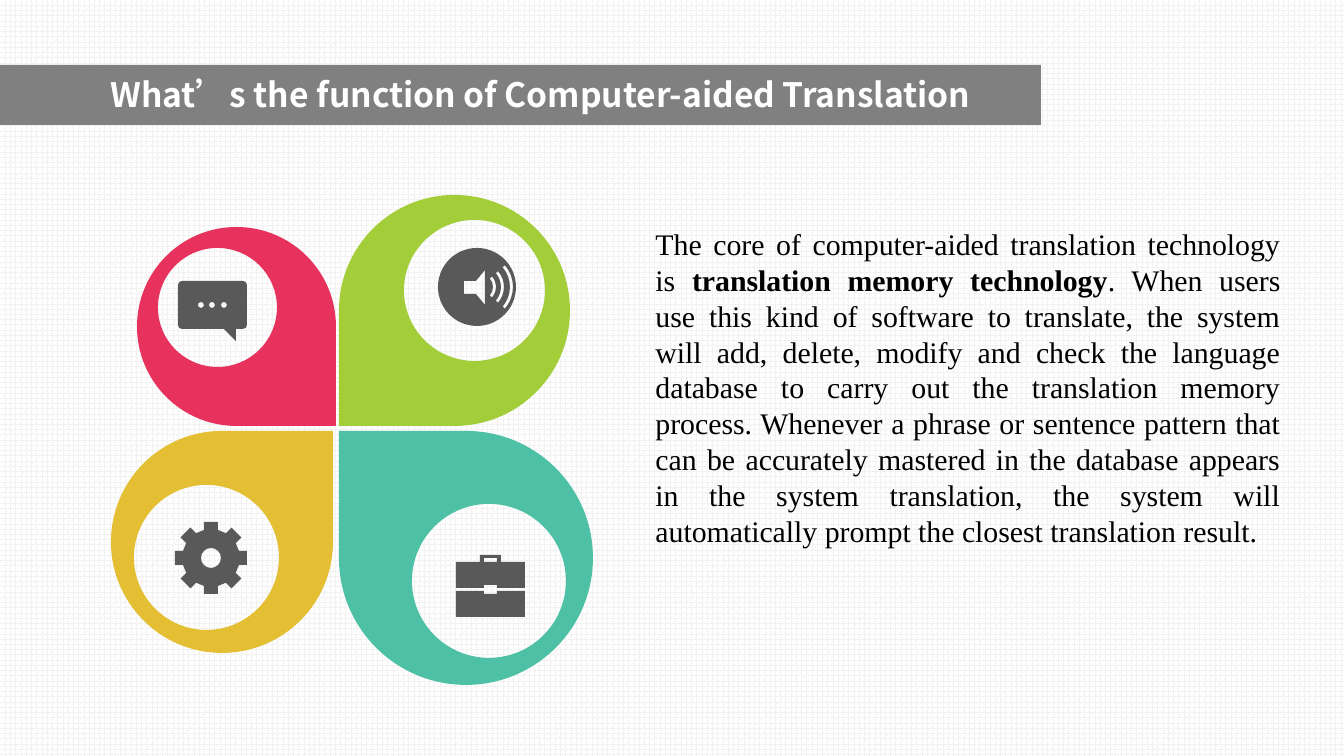
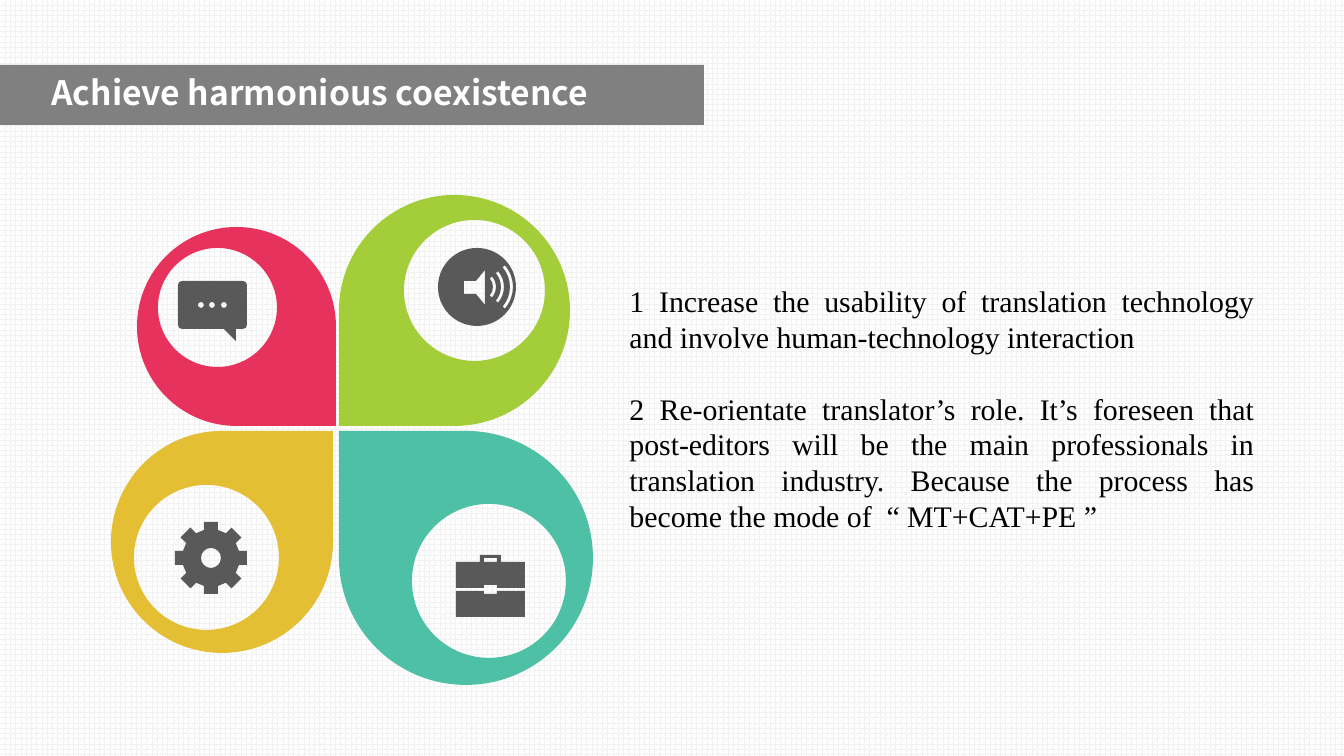
from math import ceil, cos, radians, sin, tan

from lxml import etree
from pptx import Presentation
from pptx import util as u
from pptx.dml.color import RGBColor
from pptx.enum import dml, shapes, text
from pptx.oxml.ns import qn

PX = 914400 / 134.4
PAGE_SIZE = (1344, 756)
BAND_TOP, BAND_HEIGHT = 65, 60
LINE_FACTOR = 1.2
COLORS = {
    "paper": "FFFFFF", "grid": "F2F2F2", "band": "808080", "title": "FFFFFF",
    "body": "000000", "icon": "595959",
    "red": "E6325C", "yellow": "E4BE33", "green": "A3CD39", "teal": "4EC0A5",
}
TITLE_STYLE = {"name": "Noto Sans CJK SC", "size": 18, "bold": True, "color": "title"}
BODY_STYLE = {"name": "Times New Roman", "size": 16, "color": "body"}

# Each paragraph is a list of (text, bold) spans; boxes are left, top, width, height.
SLIDES = [
    {
        "title": "What’s the function of Computer-aided Translation",
        "band_width": 1041,
        "title_box": (97, 67, 944, 54),
        "body_box": (642, 219, 652, 339),
        "body": [[
            ("The core of computer-aided translation technology is ", False),
            ("translation memory technology", True),
            (". When users use this kind of software to translate, the system will add, "
             "delete, modify and check the language database to carry out the translation "
             "memory process. Whenever a phrase or sentence pattern that can be accurately "
             "mastered in the database appears in the system translation, the system will "
             "automatically prompt the closest translation result.", False),
        ]],
    },
    {
        "title": "Achieve harmonious coexistence",
        "band_width": 704,
        "title_box": (38, 65, 1020, 54),
        "body_box": (616, 276, 652, 267),
        "body": [
            [("1 Increase the usability of translation technology and involve "
              "human-technology interaction", False)],
            [("2 Re-orientate translator’s role. It’s foreseen that post-editors will be "
              "the main professionals in translation industry. Because the process has "
              "become the mode of  “ MT+CAT+PE ”", False)],
        ],
    },
]

# Colour, petal (left, top, size), angle of the pointed corner, hole (left, top, size).
PETALS = [
    ("red", (137, 227, 199), 45, (158, 248, 119)),
    ("yellow", (111, 431, 222), 315, (134, 485, 145)),
    ("green", (339, 195, 231), 135, (404, 220, 141)),
    ("teal", (339, 431, 254), 225, (412, 504, 154)),
]
BUBBLE = {"box": (178, 281, 247, 329), "radius": 4, "tail": [(236, 329), (236, 341), (224, 329)],
          "dots": (201, 212, 224), "dot_y": 305, "dot_radius": 3}
SPEAKER = {"center": (477, 287), "radius": 39, "wave_center": (480, 287),
           "wave_radii": (16, 24, 33), "wave_width": 3, "wave_angle": 41,
           "horn": [(485, 305), (476, 294), (464, 294), (464, 281), (476, 281), (485, 270)]}
GEAR = {"center": (211, 558), "teeth": 8, "hole": 10,
        "tooth": [(28, -7), (36, -7), (36, 7), (28, 7)]}
CASE_BOTTOM = [[(456, 591), (484, 591), (484, 594), (497, 594), (497, 591),
                (525, 591), (525, 617), (456, 617)]]
CASE_TOP = [
    [(456, 562), (480, 562), (480, 555), (501, 555), (501, 562), (525, 562),
     (525, 588), (497, 588), (497, 585), (484, 585), (484, 588), (456, 588)],
    [(484, 558), (497, 558), (497, 562), (484, 562)],
]


def emu(length):
    return u.Emu(round(length * PX))


def rgb(name):
    return RGBColor.from_string(COLORS[name])


def is_curve(item):
    return len(item) == 3


def polar(center, radius, angle):
    return (center[0] + radius * cos(angle), center[1] + radius * sin(angle))


def arc(center, radius, start=0, end=360):
    """Start point, then curves of (control, control, end); degrees run clockwise."""
    count = ceil(abs(end - start) / 90)
    step = radians(end - start) / count
    pull = 4 / 3 * tan(step / 4) * radius
    items = [polar(center, radius, radians(start))]
    for i in range(count):
        a = radians(start) + i * step
        b = a + step
        (ax, ay), (bx, by) = polar(center, radius, a), polar(center, radius, b)
        items.append(((ax - pull * sin(a), ay + pull * cos(a)),
                      (bx + pull * sin(b), by - pull * cos(b)), (bx, by)))
    return items


def petal_contours(body, corner, hole):
    left, top, size = body
    center = (left + size / 2, top + size / 2)
    tip = polar(center, size / 2 * 2 ** 0.5, radians(corner))
    x, y, width = hole
    return [arc(center, size / 2, corner + 45, corner + 315) + [tip],
            arc((x + width / 2, y + width / 2), width / 2)]


def bubble_contours():
    left, top, right, bottom = BUBBLE["box"]
    r = BUBBLE["radius"]
    corners = [(right - r, bottom - r), (left + r, bottom - r),
               (left + r, top + r), (right - r, top + r)]
    rounded = [arc(c, r, 90 * i, 90 * i + 90) for i, c in enumerate(corners)]
    outline = rounded[0] + BUBBLE["tail"] + sum(rounded[1:], [])
    dots = [arc((x, BUBBLE["dot_y"]), BUBBLE["dot_radius"]) for x in BUBBLE["dots"]]
    return [outline] + dots


def speaker_contours():
    center, angle = SPEAKER["wave_center"], SPEAKER["wave_angle"]
    waves = [arc(center, r, -angle, angle) + arc(center, r - SPEAKER["wave_width"], angle, -angle)
             for r in SPEAKER["wave_radii"]]
    return [arc(SPEAKER["center"], SPEAKER["radius"]), SPEAKER["horn"]] + waves


def gear_contours():
    cx, cy = GEAR["center"]
    outline = []
    for i in range(GEAR["teeth"]):
        turn = radians(360 * i / GEAR["teeth"])
        outline += [(cx + x * cos(turn) - y * sin(turn), cy + x * sin(turn) + y * cos(turn))
                    for x, y in GEAR["tooth"]]
    return [outline, arc((cx, cy), GEAR["hole"])]


def paint(shape, color):
    shape.shadow.inherit = False
    shape.fill.solid()
    shape.fill.fore_color.rgb = rgb(color)
    shape.line.fill.background()


def bend(shape, contours):
    """Merge the three line steps of each curve into one cubic curve."""
    track = shape._element.find(".//" + qn("a:path"))
    steps = iter(list(track))
    for contour in contours:
        next(steps)
        for item in contour[1:]:
            parts = [next(steps) for _ in range(3 if is_curve(item) else 1)]
            if is_curve(item):
                curve = track.makeelement(qn("a:cubicBezTo"))
                parts[0].addprevious(curve)
                for part in parts:
                    curve.append(part[0])
                    track.remove(part)
        next(steps)


def add_outline(page, contours, color):
    """Draw closed contours as one shape; inner contours become holes."""
    builder = None
    for contour in contours:
        points = [p for item in contour for p in (item if is_curve(item) else [item])]
        points = [(emu(x), emu(y)) for x, y in points]
        if builder is None:
            builder = page.shapes.build_freeform(*points[0], scale=1.0)
        else:
            builder.move_to(*points[0])
        builder.add_line_segments(points[1:], close=True)
    shape = builder.convert_to_shape()
    bend(shape, contours)
    paint(shape, color)
    return shape


def place(box, bounds):
    for name, value in zip(("left", "top", "width", "height"), bounds):
        setattr(box, name, emu(value))


def write(box, bounds, paragraphs, style, align):
    place(box, bounds)
    frame = box.text_frame
    for name, value in {"word_wrap": True, "vertical_anchor": text.MSO_ANCHOR.TOP,
                        "auto_size": text.MSO_AUTO_SIZE.SHAPE_TO_FIT_TEXT}.items():
        setattr(frame, name, value)
    line = u.Pt(style["size"] * LINE_FACTOR)
    for i, spans in enumerate(paragraphs):
        para = frame.add_paragraph() if i else frame.paragraphs[0]
        props = para._p.get_or_add_pPr()
        props.set("marL", "0")
        props.set("indent", "0")
        etree.SubElement(props, qn("a:buNone"))
        for name, value in {"alignment": align, "line_spacing": line,
                            "space_before": line if i else u.Pt(0)}.items():
            setattr(para, name, value)
        for words, bold in spans:
            span = para.add_run()
            span.text = words
            for name, value in {"name": style["name"], "size": u.Pt(style["size"]),
                                "bold": bold}.items():
                setattr(span.font, name, value)
            span.font.color.rgb = rgb(style["color"])


def set_background(page):
    fill = page.background.fill
    fill.patterned()
    fill.pattern = dml.MSO_PATTERN.SPHERE
    fill.fore_color.rgb = rgb("grid")
    fill.back_color.rgb = rgb("paper")


def add_band(page, width):
    band = page.shapes.add_shape(shapes.MSO_SHAPE.RECTANGLE, 0, emu(BAND_TOP),
                                 emu(width), emu(BAND_HEIGHT))
    paint(band, "band")
    page.shapes._spTree.insert(2, band._element)  # behind the title


def add_flower(page):
    for color, body, corner, hole in PETALS:
        add_outline(page, petal_contours(body, corner, hole), color)
    for contours in (bubble_contours(), speaker_contours(), gear_contours()):
        add_outline(page, contours, "icon")
    page.shapes.add_group_shape(
        [add_outline(page, part, "icon") for part in (CASE_BOTTOM, CASE_TOP)])


def main():
    deck = Presentation()
    deck.slide_width, deck.slide_height = map(emu, PAGE_SIZE)
    for content in SLIDES:
        page = deck.slides.add_slide(deck.slide_layouts[1])
        set_background(page)
        add_band(page, content["band_width"])
        title = [[(content["title"], TITLE_STYLE["bold"])]]
        write(page.shapes.title, content["title_box"], title, TITLE_STYLE, text.PP_ALIGN.LEFT)
        write(page.placeholders[1], content["body_box"], content["body"], BODY_STYLE,
              text.PP_ALIGN.JUSTIFY)
        add_flower(page)
    deck.save("out.pptx")


if __name__ == "__main__":
    main()
